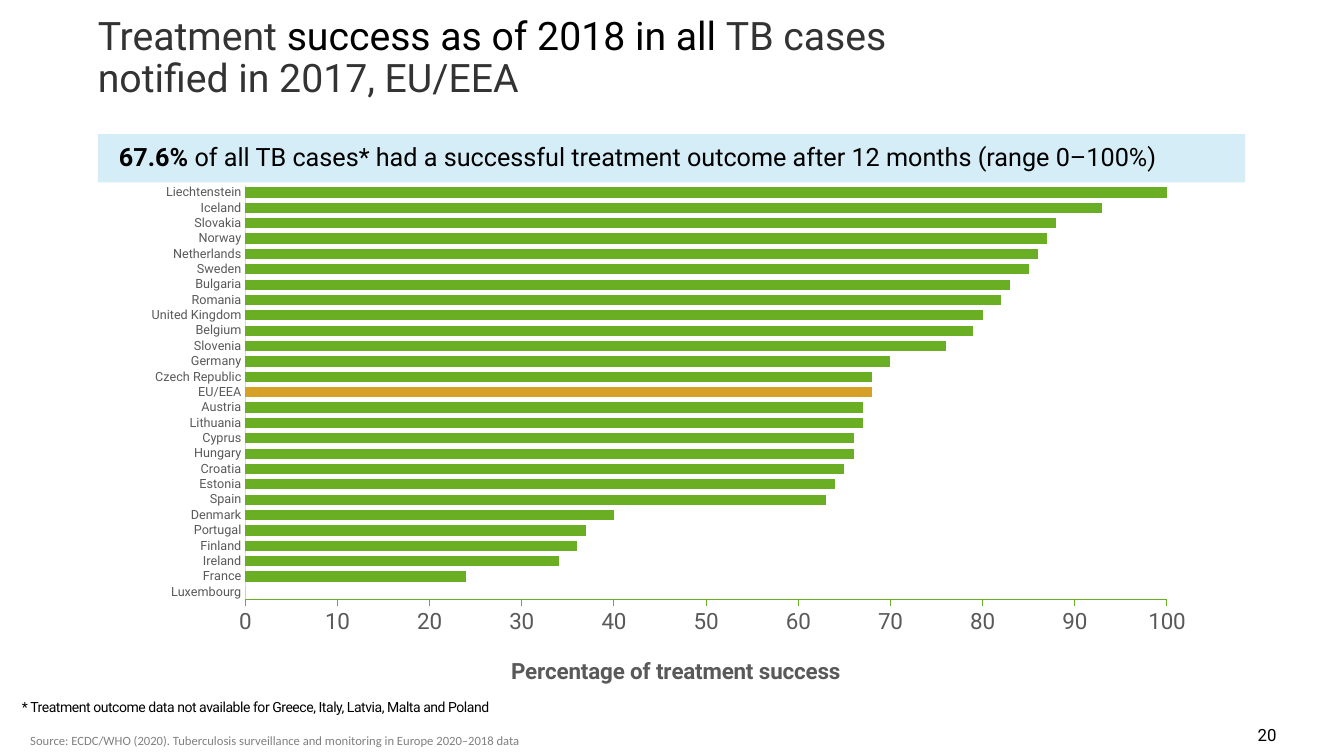
from lxml.etree import SubElement
from pptx import Presentation
from pptx.chart.data import CategoryChartData
from pptx.dml.color import RGBColor
from pptx.enum.chart import XL_CHART_TYPE, XL_TICK_MARK
from pptx.enum.shapes import MSO_SHAPE
from pptx.enum.text import MSO_ANCHOR, PP_ALIGN
from pptx.oxml import parse_xml
from pptx.oxml.ns import nsdecls, qn
from pptx.util import Inches, Pt

COLORS = {"black": "000000", "title": "333333", "axis": "595959", "source": "808080",
          "banner": "ACDDEF", "country": "69AE23", "average": "D6A026", "rule": "D9D9D9"}

# Content
TITLE = [("Treatment ", "title"), ("success as of 2018 in all ", "black"),
         ("TB cases notified in 2017, EU/EEA", "title")]
BANNER = [("67.6% ", True),
          ("of all TB cases* had a successful treatment outcome after 12 months (range 0–100%)", False)]
FOOTNOTE = "* Treatment outcome data not available for Greece, Italy, Latvia, Malta and Poland"
SOURCE = "Source: ECDC/WHO (2020). Tuberculosis surveillance and monitoring in Europe 2020–2018 data"
PAGE = "20"
AXIS_TITLE = "Percentage of treatment success"
AVERAGE = "EU/EEA"
SUCCESS = {
    "Luxembourg": 0, "France": 24, "Ireland": 34, "Finland": 36, "Portugal": 37,
    "Denmark": 40, "Spain": 63, "Estonia": 64, "Croatia": 65, "Hungary": 66,
    "Cyprus": 66, "Lithuania": 67, "Austria": 67, AVERAGE: 68, "Czech Republic": 68,
    "Germany": 70, "Slovenia": 76, "Belgium": 79, "United Kingdom": 80, "Romania": 82,
    "Bulgaria": 83, "Sweden": 85, "Netherlands": 86, "Norway": 87, "Slovakia": 88,
    "Iceland": 93, "Liechtenstein": 100,
}


def rgb(name):
    return RGBColor.from_string(COLORS[name])


def inches(*lengths):
    return [Inches(length) for length in lengths]


def style(font, size, color, name="Roboto", bold=False):
    for key, value in {"size": Pt(size), "name": name, "bold": bold}.items():
        setattr(font, key, value)
    font.color.rgb = rgb(color)


def set_frame(frame, insets, anchor=MSO_ANCHOR.TOP):
    sides = ("margin_left", "margin_top", "margin_right", "margin_bottom")
    settings = dict(zip(sides, inches(*insets)), word_wrap=True, vertical_anchor=anchor)
    for key, value in settings.items():
        setattr(frame, key, value)


def add_run(paragraph, text, *look, **options):
    run = paragraph.add_run()
    run.text = text
    style(run.font, *look, **options)
    return run


def add_label(box, text, insets, anchor, *look):
    frame = slide.shapes.add_textbox(*inches(*box)).text_frame
    set_frame(frame, insets, anchor)
    return frame.paragraphs[0], add_run(frame.paragraphs[0], text, *look)


def place(element, x, y, width=None, height=None):
    """Fix the layout of a chart part, in fractions of the chart."""
    for old in element.findall(qn("c:layout")):
        element.remove(old)
    inner = '<c:layoutTarget val="inner"/>' if width else ""
    modes = '<c:xMode val="edge"/><c:yMode val="edge"/>'
    values = {"x": x, "y": y, "w": width, "h": height}
    parts = "".join(f'<c:{key} val="{value}"/>' for key, value in values.items() if value)
    layout = parse_xml(f'<c:layout {nsdecls("c")}><c:manualLayout>{inner}{modes}{parts}'
                       "</c:manualLayout></c:layout>")
    text = element.find(qn("c:tx"))
    element.insert(0 if text is None else 1, layout)


prs = Presentation()
prs.slide_width, prs.slide_height = inches(13.33, 7.5)
slide = prs.slides.add_slide(prs.slide_layouts[5])

# Title
title = slide.shapes.title
title.left, title.top, title.width, title.height = inches(0.97, 0.16, 8.58, 0.9)
set_frame(title.text_frame, (0, 0, 0, 0))
heading = title.text_frame.paragraphs[0]
heading.alignment, heading.line_spacing = PP_ALIGN.LEFT, 0.9
for text, color in TITLE:
    add_run(heading, text, 28, color)

# Banner with the key figure
banner = slide.shapes.add_shape(MSO_SHAPE.SNIP_2_DIAG_RECTANGLE, *inches(0.97, 1.33, 11.38, 0.48))
banner.adjustments[0] = banner.adjustments[1] = 0
banner.shadow.inherit = False
banner.fill.solid()
banner.fill.fore_color.rgb = rgb("banner")
SubElement(banner.fill._xPr.find(".//" + qn("a:srgbClr")), qn("a:alpha"), val="50000")
banner.line.fill.background()
set_frame(banner.text_frame, (0.21, 0.03, 0.1, 0.07), MSO_ANCHOR.MIDDLE)
message = banner.text_frame.paragraphs[0]
message.alignment = PP_ALIGN.LEFT
for text, bold in BANNER:
    add_run(message, text, 18, "black", bold=bold)

# Chart of treatment success by country
data = CategoryChartData(number_format="0")
data.categories = list(SUCCESS)
data.add_series("Series 1", list(SUCCESS.values()))
chart = slide.shapes.add_chart(XL_CHART_TYPE.BAR_CLUSTERED,
                               *inches(1.29, 1.74, 10.68, 5.21), data).chart
chart.has_legend = chart.has_title = False
style(chart.font, 10, "black")
plot = chart.plots[0]
plot.gap_width, plot.overlap, plot.vary_by_categories = 50, 70, False
bars = plot.series[0]
average_bar = bars.points[list(SUCCESS).index(AVERAGE)]
for part, color in ((bars, "country"), (average_bar, "average")):
    part.format.fill.solid()
    part.format.fill.fore_color.rgb = rgb(color)

# Axes
countries, percent = chart.category_axis, chart.value_axis
for axis, size, line, tick in ((countries, 9, "rule", XL_TICK_MARK.NONE),
                               (percent, 16, "country", XL_TICK_MARK.OUTSIDE)):
    axis.has_major_gridlines = False
    axis.major_tick_mark, axis.minor_tick_mark = tick, XL_TICK_MARK.NONE
    axis.format.line.color.rgb = rgb(line)
    axis.format.line.width = Pt(0.75)
    style(axis.tick_labels.font, size, "axis")
label_skip = parse_xml(f'<c:tickLblSkip {nsdecls("c")} val="2"/>')
countries._element.find(qn("c:noMultiLvlLbl")).addprevious(label_skip)
percent.minimum_scale, percent.maximum_scale, percent.major_unit = 0, 100, 10
percent.tick_labels.number_format = "0"
percent.tick_labels.number_format_is_linked = False
caption = percent.axis_title.text_frame.paragraphs[0]
add_run(caption, AXIS_TITLE, 16, "axis", bold=True)
place(percent.axis_title._element, 0.35, 0.91)
place(chart._chartSpace.chart.plotArea, 0.107, 0.018, 0.856, 0.79)

# Footnote, source and page number
_, note = add_label((0.12, 6.88, 5.53, 0.27), FOOTNOTE, (0.1, 0.05, 0.1, 0.05),
                    MSO_ANCHOR.TOP, 10, "black")
note.font._element.set("spc", "-30")
credit, _ = add_label((0.3, 7.29, 5.69, 0.2), SOURCE, (0, 0, 0, 0),
                      MSO_ANCHOR.TOP, 9, "source", "Calibri")
credit.line_spacing = 0.9
number, _ = add_label((9.96, 7.09, 2.8, 0.4), PAGE, (0.1, 0.04, 0.1, 0.04),
                      MSO_ANCHOR.MIDDLE, 12, "black")
number.alignment = PP_ALIGN.RIGHT

prs.save("out.pptx")
